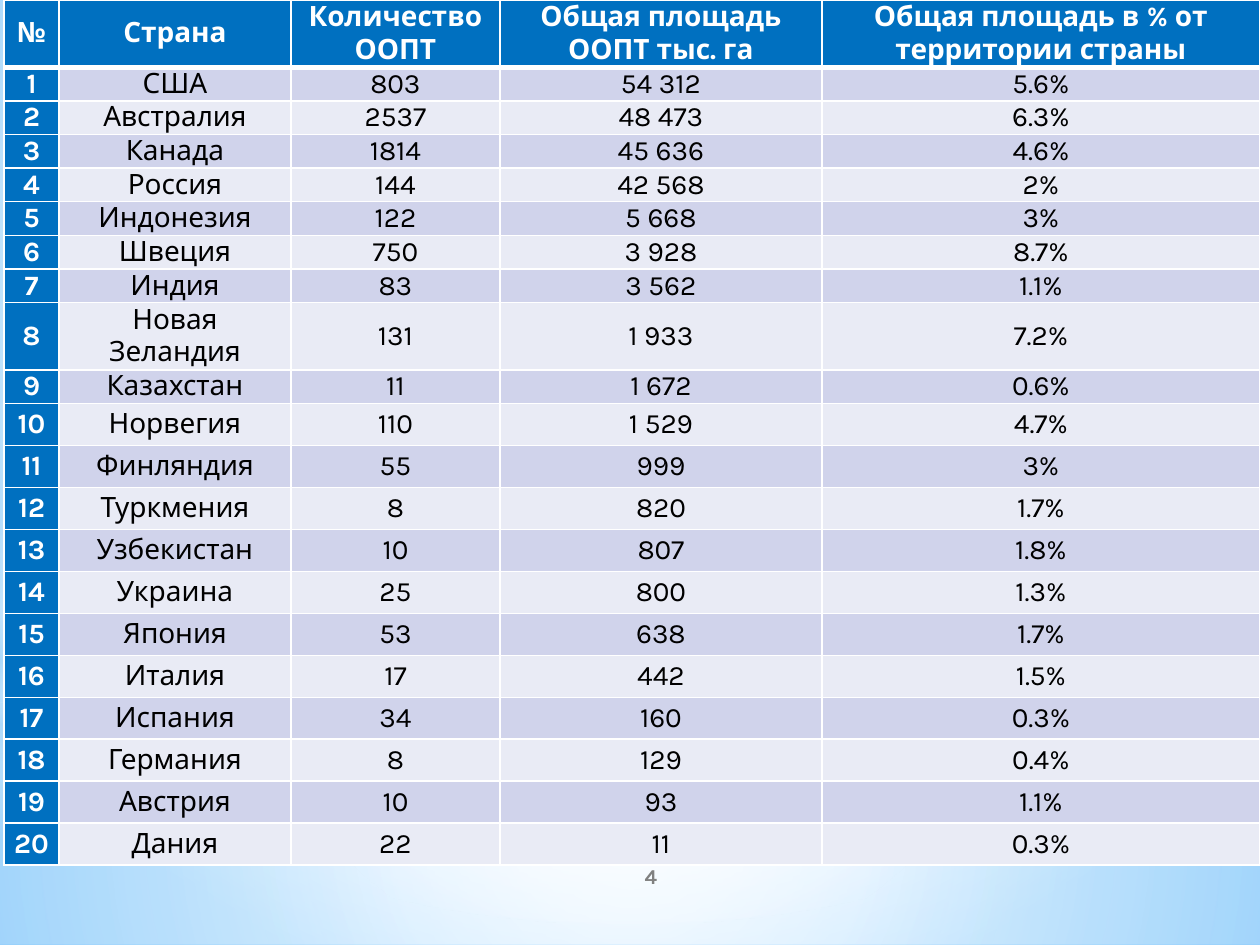
from typing import NamedTuple

from lxml import etree
from pptx import Presentation, util as u
from pptx.dml.color import RGBColor
from pptx.enum import shapes, text
from pptx.oxml.ns import qn

EMU_PER_PX = 914400 / 126
FONT = "Karla"
WHITE = RGBColor(0xFF, 0xFF, 0xFF)
BLACK = RGBColor(0x00, 0x00, 0x00)
GRAY = RGBColor(0x80, 0x80, 0x80)
BLUE = RGBColor(0x00, 0x70, 0xC0)
BAND_DARK = RGBColor(0xD0, 0xD3, 0xEB)
BAND_LIGHT = RGBColor(0xE9, 0xEB, 0xF5)
SKY = RGBColor(0x9E, 0xD5, 0xFF)
DEEP_SKY = RGBColor(0x5B, 0xB9, 0xFF)
PALE_SKY = RGBColor(0xB4, 0xDC, 0xFA)


class Stop(NamedTuple):
    position: int
    color: RGBColor
    opacity: int = 100


class Glow(NamedTuple):
    kind: shapes.MSO_SHAPE
    top: int
    height: int
    stops: list[Stop]
    focus: tuple[int, ...] | None = (50, 50, 50, 50)


class Country(NamedTuple):
    name: str
    reserves: str
    area: str
    share: str


GLOWS = [
    Glow(shapes.MSO_SHAPE.RECTANGLE, 703, 242,
         [Stop(0, WHITE, 91), Stop(37, WHITE, 76), Stop(100, PALE_SKY, 79)]),
    Glow(shapes.MSO_SHAPE.RECTANGLE, 0, 703,
         [Stop(0, WHITE, 89), Stop(48, WHITE, 62), Stop(100, PALE_SKY, 79)]),
    Glow(shapes.MSO_SHAPE.RECTANGLE, 519, 315,
         [Stop(0, WHITE, 0), Stop(29, WHITE, 30), Stop(45, PALE_SKY, 40),
          Stop(55, WHITE, 26), Stop(65, PALE_SKY, 60), Stop(100, WHITE, 0)], None),
    Glow(shapes.MSO_SHAPE.OVAL, 221, 703, [Stop(0, WHITE), Stop(56, WHITE, 0)]),
]
HEADINGS = ["№", "Страна", "Количество ООПТ", "Общая площадь ООПТ тыс. га",
            "Общая площадь в % от территории страны"]
COUNTRIES = [
    Country("США", "803", "54 312", "5.6%"),
    Country("Австралия", "2537", "48 473", "6.3%"),
    Country("Канада", "1814", "45 636", "4.6%"),
    Country("Россия", "144", "42 568", "2%"),
    Country("Индонезия", "122", "5 668", "3%"),
    Country("Швеция", "750", "3 928", "8.7%"),
    Country("Индия", "83", "3 562", "1.1%"),
    Country("Новая Зеландия", "131", "1 933", "7.2%"),
    Country("Казахстан", "11", "1 672", "0.6%"),
    Country("Норвегия", "110", "1 529", "4.7%"),
    Country("Финляндия", "55", "999", "3%"),
    Country("Туркмения", "8", "820", "1.7%"),
    Country("Узбекистан", "10", "807", "1.8%"),
    Country("Украина", "25", "800", "1.3%"),
    Country("Япония", "53", "638", "1.7%"),
    Country("Италия", "17", "442", "1.5%"),
    Country("Испания", "34", "160", "0.3%"),
    Country("Германия", "8", "129", "0.4%"),
    Country("Австрия", "10", "93", "1.1%"),
    Country("Дания", "22", "11", "0.3%"),
]
COLUMN_WIDTHS = [55, 232, 209, 322, 438]
ROW_HEIGHTS = [63] + [32] * 7 + [63, 32] + [42] * 11


def px(length: int) -> u.Emu:
    return u.Emu(round(length * EMU_PER_PX))


def add_color(parent, color: RGBColor, opacity: int = 100) -> None:
    tone = etree.SubElement(parent, qn("a:srgbClr"), val=str(color))
    if opacity < 100:
        etree.SubElement(tone, qn("a:alpha"), val=str(opacity * 1000))


def set_gradient(fill, owner, stops: list[Stop], focus: tuple[int, ...] | None) -> None:
    fill.gradient()
    gradient = owner.find(".//" + qn("a:gradFill"))
    for child in list(gradient):
        gradient.remove(child)
    stop_list = etree.SubElement(gradient, qn("a:gsLst"))
    for stop in stops:
        mark = etree.SubElement(stop_list, qn("a:gs"), pos=str(stop.position * 1000))
        add_color(mark, stop.color, stop.opacity)
    if focus is None:
        etree.SubElement(gradient, qn("a:lin"), ang="5400000", scaled="0")
        return
    spread = etree.SubElement(gradient, qn("a:path"), path="circle")
    etree.SubElement(spread, qn("a:fillToRect"),
                     {side: str(part * 1000) for side, part in zip("ltrb", focus)})


def add_glow(slide, glow: Glow) -> None:
    shape = slide.shapes.add_shape(glow.kind, 0, px(glow.top), px(1260), px(glow.height))
    shape.shadow.inherit = False
    shape.line.fill.background()
    set_gradient(shape.fill, shape.element.spPr, glow.stops, glow.focus)


def write(frame, words: str, size: int, color: RGBColor, bold: bool) -> None:
    paragraph = frame.paragraphs[0]
    paragraph.alignment = text.PP_ALIGN.CENTER
    run = paragraph.add_run()
    run.text = words
    run.font.name = FONT
    run.font.size = u.Pt(size)
    run.font.bold = bold
    run.font.color.rgb = color


def set_borders(cell, row: int) -> None:
    widths = {"L": 1, "R": 1, "T": 3 if row == 1 else 1, "B": 3 if row == 0 else 1}
    properties = cell._tc.get_or_add_tcPr()
    for side, width in widths.items():
        border = etree.SubElement(properties, qn(f"a:ln{side}"), w=str(u.Pt(width)))
        add_color(etree.SubElement(border, qn("a:solidFill")), WHITE)


def fill_cell(cell, row: int, column: int, words: str) -> None:
    accent = row == 0 or column == 0
    set_borders(cell, row)
    cell.fill.solid()
    cell.fill.fore_color.rgb = BLUE if accent else BAND_DARK if row % 2 else BAND_LIGHT
    cell.margin_left = cell.margin_right = px(5)
    cell.margin_top = cell.margin_bottom = 0
    cell.vertical_anchor = text.MSO_ANCHOR.MIDDLE
    write(cell.text_frame, words, 16, WHITE if accent else BLACK, accent)


def add_reserves_table(slide) -> None:
    rows = [HEADINGS] + [[str(rank), *country] for rank, country in enumerate(COUNTRIES, 1)]
    reserves = slide.shapes.add_table(
        len(rows), len(HEADINGS), px(4), 0,
        px(sum(COLUMN_WIDTHS)), px(sum(ROW_HEIGHTS))).table
    reserves.horz_banding = False
    for column, width in zip(reserves.columns, COLUMN_WIDTHS):
        column.width = px(width)
    for row, height in zip(reserves.rows, ROW_HEIGHTS):
        row.height = px(height)
    for row, entries in enumerate(rows):
        for column, words in enumerate(entries):
            fill_cell(reserves.cell(row, column), row, column, words)


def add_page_number(slide) -> None:
    frame = slide.shapes.add_textbox(px(525), px(851), px(252), px(50)).text_frame
    frame.word_wrap = True
    frame.vertical_anchor = text.MSO_ANCHOR.MIDDLE
    write(frame, "4", 12, GRAY, True)


def main() -> None:
    deck = Presentation()
    deck.slide_width, deck.slide_height = px(1260), px(945)
    slide = deck.slides.add_slide(deck.slide_layouts[6])
    set_gradient(slide.background.fill, slide.element,
                 [Stop(0, SKY), Stop(60, WHITE), Stop(100, DEEP_SKY)], (20, 10, 20, 60))
    for glow in GLOWS:
        add_glow(slide, glow)
    add_page_number(slide)
    add_reserves_table(slide)
    deck.save("out.pptx")


if __name__ == "__main__":
    main()
